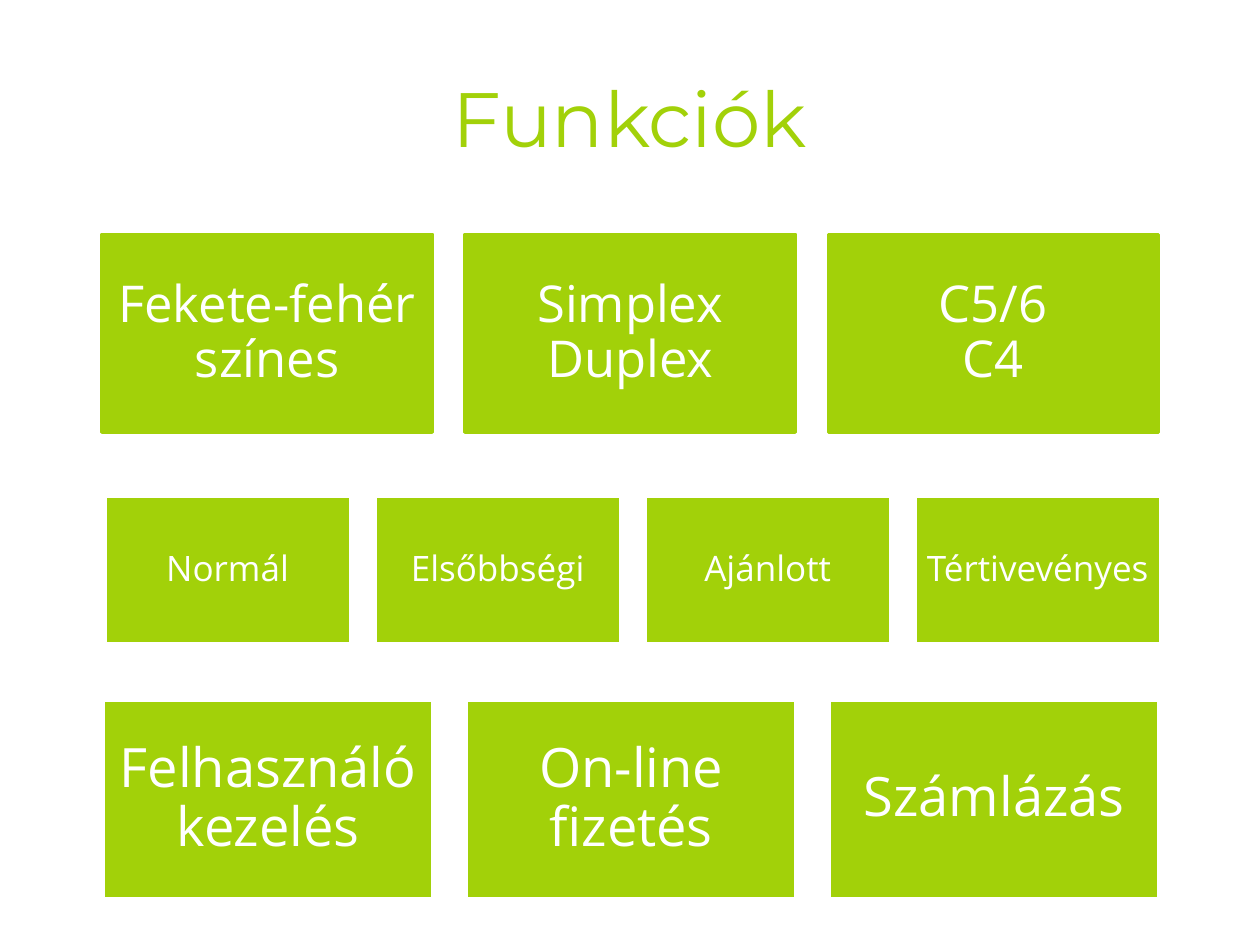
from pptx import Presentation
from pptx.dml.color import RGBColor
from pptx.enum.shapes import MSO_SHAPE
from pptx.enum.text import MSO_ANCHOR, PP_ALIGN
from pptx.util import Pt

GREEN = "A2D109"
WHITE = "FFFFFF"

ROWS = [
    {"left": 58.4, "top": 133.9, "width": 188.6, "size": 29, "inset": 8.6, "border": GREEN,
     "labels": ["Fekete-fehér\nszínes", "Simplex\nDuplex", "C5/6\nC4"]},
    {"left": 59.9, "top": 283.8, "width": 140.3, "size": 20, "inset": 5.8, "border": WHITE,
     "labels": ["Normál", "Elsőbbségi", "Ajánlott", "Tértivevényes"]},
    {"left": 58.9, "top": 400.2, "width": 188.6, "size": 31, "inset": 9.4, "border": WHITE,
     "labels": ["Felhasználó kezelés", "On-line fizetés", "Számlázás"]},
]


def color(value):
    return RGBColor.from_string(value)


class FeatureSlide:
    heading_font = "Montserrat"
    body_font = "Open Sans"
    gap_ratio = 0.1
    height_ratio = 0.6
    border_width = 2

    def __init__(self, deck):
        self.slide = deck.slides.add_slide(deck.slide_layouts[6])

    def set_text(self, shape, text, inset, line_spacing, font):
        frame = shape.text_frame
        margins = {f"margin_{side}": Pt(inset) for side in ("left", "right", "top", "bottom")}
        frame_format = {"word_wrap": True, "vertical_anchor": MSO_ANCHOR.MIDDLE, **margins}
        for name, value in frame_format.items():
            setattr(frame, name, value)
        para = frame.paragraphs[0]
        para.text = text
        para.alignment = PP_ALIGN.CENTER
        para.line_spacing = line_spacing
        for span in para.runs:
            for name, value in font.items():
                if name == "color":
                    span.font.color.rgb = color(value)
                else:
                    setattr(span.font, name, value)

    def title(self, text):
        box = self.slide.shapes.add_textbox(Pt(36), Pt(21.6), Pt(648), Pt(90))
        self.set_text(box, text, 3.6, 1.0,
                      {"name": self.heading_font, "size": Pt(44), "color": GREEN})

    def tile(self, text, left, top, width, size, inset, border):
        box = self.slide.shapes.add_shape(
            MSO_SHAPE.RECTANGLE, Pt(left), Pt(top), Pt(width), Pt(width * self.height_ratio))
        box.shadow.inherit = False
        box.fill.solid()
        box.fill.fore_color.rgb = color(GREEN)
        box.line.color.rgb = color(border)
        box.line.width = Pt(self.border_width)
        self.set_text(box, text, inset, 0.9,
                      {"name": self.body_font, "size": Pt(size), "color": WHITE})

    def tile_row(self, labels, left, width, **style):
        step = width * (1 + self.gap_ratio)
        for column, label in enumerate(labels):
            self.tile(label, left + column * step, width=width, **style)


def main():
    deck = Presentation()
    deck.slide_width, deck.slide_height = Pt(720), Pt(540)
    page = FeatureSlide(deck)
    page.title("Funkciók")
    for row in ROWS:
        page.tile_row(**row)
    deck.save("out.pptx")


if __name__ == "__main__":
    main()
